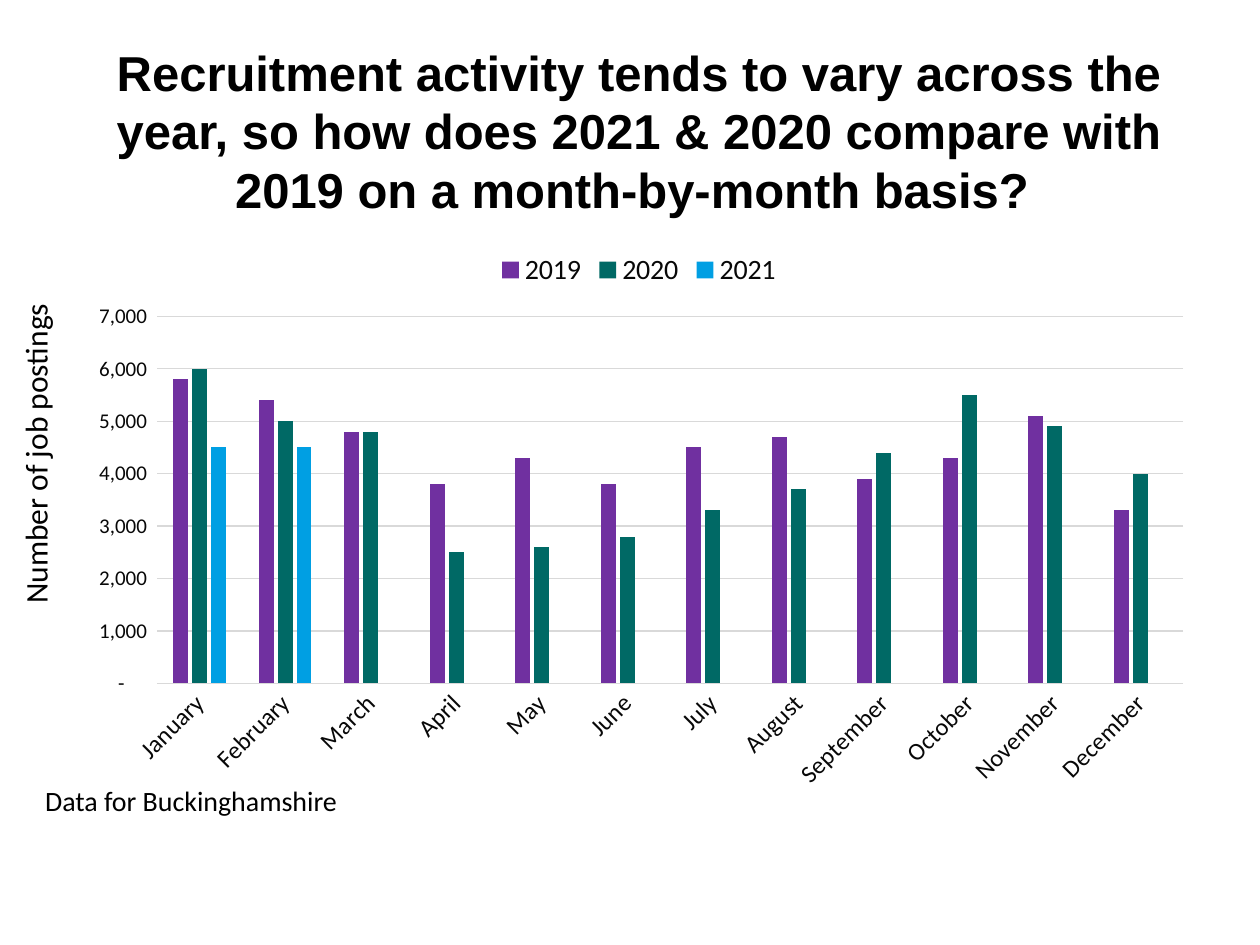
from dataclasses import dataclass, field

from pptx import Presentation
from pptx.chart.data import CategoryChartData
from pptx.dml.color import RGBColor
from pptx.enum.chart import XL_CHART_TYPE as ChartType, XL_LEGEND_POSITION as LegendPosition
from pptx.enum.chart import XL_TICK_MARK as TickMark
from pptx.enum.text import MSO_ANCHOR as Anchor, MSO_AUTO_SIZE as AutoSize, PP_ALIGN as Align
from pptx.util import Inches, Pt

COLORS = {
    "text": "000000",
    "label": "080808",
    "grid": "D9D9D9",
    "2019": "7030A0",
    "2020": "006965",
    "2021": "009FE3",
}
MONTHS = ["January", "February", "March", "April", "May", "June", "July",
          "August", "September", "October", "November", "December"]
POSTINGS = {
    "2019": [5800, 5400, 4800, 3800, 4300, 3800, 4500, 4700, 3900, 4300, 5100, 3300],
    "2020": [6000, 5000, 4800, 2500, 2600, 2800, 3300, 3700, 4400, 5500, 4900, 4000],
    "2021": [4500, 4500] + [None] * 10,
}
NUMBER_FORMAT = '_-* #,##0_-;\\-* #,##0_-;_-* "-"??_-;_-@_-'


def set_font(font, size, color="text", name="Calibri", bold=False):
    """Apply size, colour, typeface and weight to a font."""
    font.size = Pt(size)
    font.name = name
    font.bold = bold
    font.color.rgb = RGBColor.from_string(COLORS[color])


def write_text(frame, text, size, align=Align.LEFT, name="Calibri", bold=False):
    """Write one formatted paragraph into a text frame."""
    frame.word_wrap = True
    paragraph = frame.paragraphs[0]
    paragraph.alignment = align
    run = paragraph.add_run()
    run.text = text
    set_font(run.font, size, name=name, bold=bold)


def style_line(line, color="grid"):
    """Give a line the thin chart style."""
    line.color.rgb = RGBColor.from_string(COLORS[color])
    line.width = Pt(0.75)


@dataclass
class SlideBuilder:
    """Hold the current slide and the chart style, and add its elements."""
    slide: object
    colors: dict = field(default_factory=lambda: COLORS)

    def title(self, text, left, top, width, height):
        """Move and fill the title placeholder."""
        shape = self.slide.shapes.title
        shape.left, shape.top = Inches(left), Inches(top)
        shape.width, shape.height = Inches(width), Inches(height)
        frame = shape.text_frame
        frame.auto_size = AutoSize.NONE
        frame.vertical_anchor = Anchor.MIDDLE
        write_text(frame, text, 28, align=Align.CENTER, name="Arial", bold=True)

    def label(self, text, left, top, width, height, size, upward=False):
        """Add a text box, optionally reading upward."""
        shape = self.slide.shapes.add_textbox(
            Inches(left), Inches(top), Inches(width), Inches(height))
        frame = shape.text_frame
        frame.auto_size = AutoSize.SHAPE_TO_FIT_TEXT
        write_text(frame, text, size)
        if upward:
            frame._txBody.bodyPr.set("vert", "vert270")

    def column_chart(self, categories, series, left, top, width, height):
        """Add the clustered column chart with its axes and legend."""
        data = CategoryChartData(number_format="#,##0")
        data.categories = categories
        for name, values in series.items():
            data.add_series(name, values)
        chart = self.slide.shapes.add_chart(
            ChartType.COLUMN_CLUSTERED, Inches(left), Inches(top),
            Inches(width), Inches(height), data).chart
        set_font(chart.font, 10)
        chart.has_title = False

        chart.has_legend = True
        chart.legend.position = LegendPosition.TOP
        chart.legend.include_in_layout = False
        set_font(chart.legend.font, 16, color="label")

        plot = chart.plots[0]
        plot.gap_width = 219
        plot.overlap = -27
        plot.vary_by_categories = False
        for bars in plot.series:
            bars.invert_if_negative = False
            bars.format.fill.solid()
            bars.format.fill.fore_color.rgb = RGBColor.from_string(self.colors[bars.name])

        for axis, size in ((chart.category_axis, 14), (chart.value_axis, 12)):
            axis.major_tick_mark = axis.minor_tick_mark = TickMark.NONE
            set_font(axis.tick_labels.font, size, color="label")
        months, counts = chart.category_axis, chart.value_axis
        style_line(months.format.line)
        months._element.txPr.bodyPr.set("rot", "-2700000")
        counts.format.line.fill.background()
        counts.minimum_scale, counts.maximum_scale, counts.major_unit = 0, 7000, 1000
        counts.has_major_gridlines = True
        style_line(counts.major_gridlines.format.line)
        counts.tick_labels.number_format = NUMBER_FORMAT
        counts.tick_labels.number_format_is_linked = False


def main():
    """Build the recruitment slide and save it."""
    presentation = Presentation()
    presentation.slide_width, presentation.slide_height = Inches(10), Inches(7.5)
    builder = SlideBuilder(presentation.slides.add_slide(presentation.slide_layouts[5]))
    builder.title("Recruitment activity tends to vary across the year, so how does "
                  "2021 & 2020 compare with 2019 on a month-by-month basis? ",
                  0.57, 0.41, 9, 1.25)
    builder.column_chart(MONTHS, POSTINGS, 0.57, 1.89, 9, 4.46)
    builder.label("Data for Buckinghamshire", 0.26, 6.17, 3.78, 0.37, size=16)
    builder.label("Number of job postings", 0.08, 2.08, 0.5, 2.81, size=18, upward=True)
    presentation.save("out.pptx")


if __name__ == "__main__":
    main()
